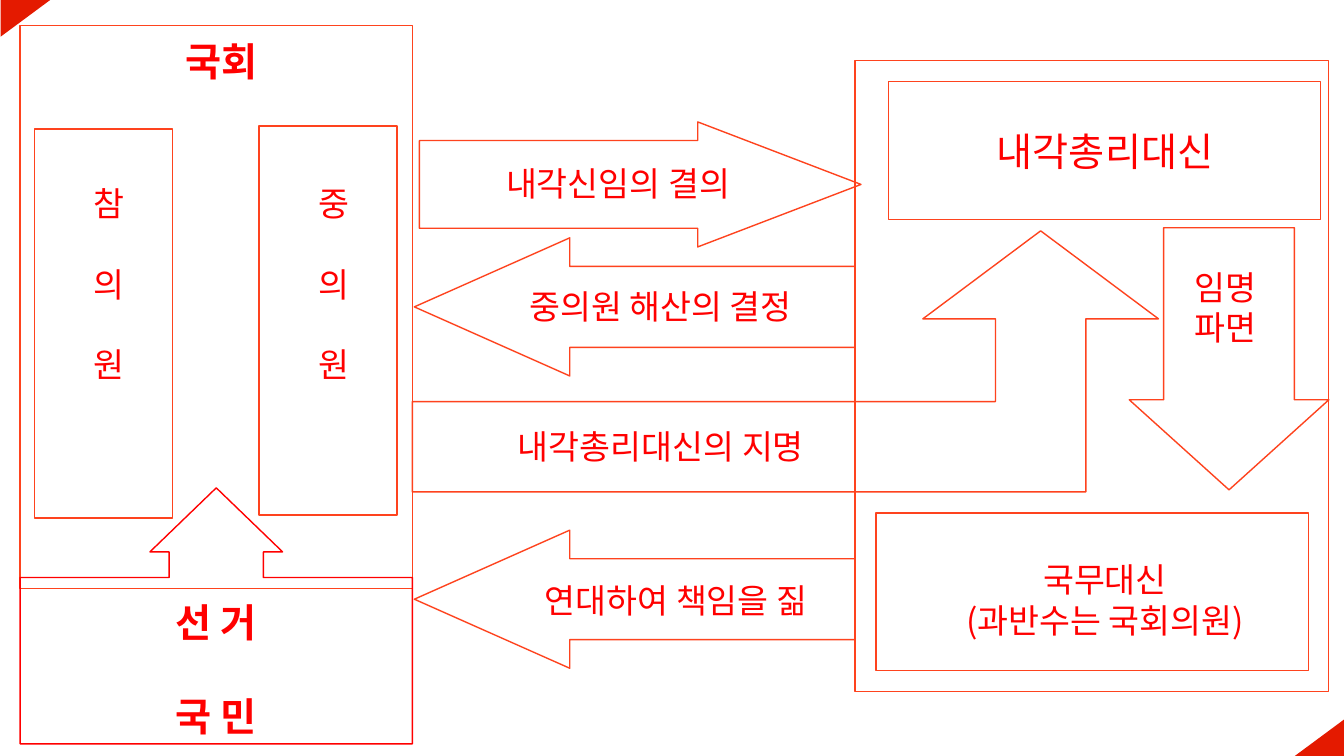
from dataclasses import dataclass

from lxml import etree
from pptx import Presentation
from pptx.dml.color import RGBColor
from pptx.enum.shapes import MSO_SHAPE
from pptx.enum.text import MSO_ANCHOR, MSO_AUTO_SIZE, PP_ALIGN
from pptx.oxml.ns import qn
from pptx.util import Inches, Pt

RECTANGLE = MSO_SHAPE.RECTANGLE
TRIANGLE = MSO_SHAPE.RIGHT_TRIANGLE
RIGHT_ARROW = MSO_SHAPE.RIGHT_ARROW
LEFT_ARROW = MSO_SHAPE.LEFT_ARROW
DOWN_ARROW = MSO_SHAPE.DOWN_ARROW
BENT_ARROW = MSO_SHAPE.BENT_UP_ARROW
CALLOUT = MSO_SHAPE.UP_ARROW_CALLOUT
LEFT, CENTER = PP_ALIGN.LEFT, PP_ALIGN.CENTER
TOP = MSO_ANCHOR.TOP
NO_AUTOFIT = MSO_AUTO_SIZE.NONE


@dataclass(frozen=True)
class Theme:
    font: str = "Noto Sans CJK KR"
    text: RGBColor = RGBColor(0xFF, 0x00, 0x00)
    outline: RGBColor = RGBColor(0xFE, 0x43, 0x1E)
    corner: RGBColor = RGBColor(0xE4, 0x1A, 0x00)
    heading: int = 28
    label: int = 24


THEME = Theme()

presentation = Presentation()
presentation.slide_width = Inches(13.33)
presentation.slide_height = Inches(7.5)
slide = presentation.slides.add_slide(presentation.slide_layouts[5])


def add_outline(kind, box, adjustments=(), color=THEME.outline):
    shape = slide.shapes.add_shape(kind, *map(Inches, box))
    shape.shadow.inherit = False
    shape.fill.background()
    shape.line.color.rgb = color
    shape.line.width = Pt(1)
    for index, value in enumerate(adjustments):
        shape.adjustments[index] = value
    return shape


def write_text(text, box, size=THEME.label, bold=False, align=CENTER, gap=0, holder=None):
    """Write one paragraph per line, with gap points between paragraphs."""
    if holder is None:
        holder = slide.shapes.add_textbox(0, 0, 0, 0)
    holder.left, holder.top, holder.width, holder.height = map(Inches, box)
    frame = holder.text_frame
    frame.word_wrap = True
    frame.auto_size = NO_AUTOFIT
    frame.vertical_anchor = TOP
    frame.text = text
    for index, paragraph in enumerate(frame.paragraphs):
        paragraph.alignment = align
        paragraph.space_before = Pt(gap if index else 0)
        font = paragraph.runs[0].font
        font.size = Pt(size)
        font.bold = bold
        font.color.rgb = THEME.text
        font.name = THEME.font
        properties = paragraph.runs[0]._r.get_or_add_rPr()
        etree.SubElement(properties, qn("a:ea"), typeface=THEME.font)


# Corner triangles
for left, top, rotation in ((0.07, -0.07, 90), (12.9, 7.07, 270)):
    corner = add_outline(TRIANGLE, (left, top, 0.37, 0.5))
    corner.rotation = rotation
    corner.fill.solid()
    corner.fill.fore_color.rgb = THEME.corner
    corner.line.fill.background()

# National Diet with its two chambers
add_outline(RECTANGLE, (0.2, 0.25, 3.89, 5.59))
write_text("국회", (0.94, 0.32, 2.52, 0.57), size=THEME.heading, bold=True,
           holder=slide.shapes.title)
for name, left, top in (("참\n의\n원", 0.34, 1.28), ("중\n의\n원", 2.57, 1.25)):
    add_outline(RECTANGLE, (left, top, 1.37, 3.86))
    write_text(name, (left + 0.44, 1.77, 0.61, 2.54), gap=28.5)

# Cabinet with the prime minister and the ministers
add_outline(RECTANGLE, (8.48, 0.6, 4.7, 6.26))
add_outline(RECTANGLE, (8.81, 0.81, 4.29, 1.37))
write_text("내각총리대신", (9.27, 1.21, 3.38, 0.57), size=THEME.heading)
add_outline(RECTANGLE, (8.69, 5.09, 4.29, 1.56))
write_text("국무대신\n(과반수는 국회의원)", (9.23, 5.5, 3.46, 0.91))

# Appointment and dismissal inside the cabinet
add_outline(DOWN_ARROW, (11.2, 2.26, 1.98, 2.6), (0.655, 0.451))
write_text("임명\n파면", (11.75, 2.6, 1.02, 0.91), align=LEFT)

# Arrows between the Diet and the cabinet
RETURN_SHAPE = (0.586, 1.125)
exchanges = (
    (RIGHT_ARROW, (4.16, 1.21, 4.38, 1.24), (0.702, 1.306),
     "내각신임의 결의", (4.03, 1.57, 4.2, 0.5)),
    (LEFT_ARROW, (4.11, 2.36, 4.37, 1.37), RETURN_SHAPE,
     "중의원 해산의 결정", (4.75, 2.79, 3.6, 0.5)),
    (BENT_ARROW, (4.09, 2.29, 7.4, 2.59), (0.346, 0.451, 0.337),
     "내각총리대신의 지명", (4.24, 4.18, 4.63, 0.5)),
    (LEFT_ARROW, (4.11, 5.26, 4.37, 1.37), RETURN_SHAPE,
     "연대하여 책임을 짊", (4.97, 5.7, 3.47, 0.5)),
)
for kind, arrow_box, adjustments, label, label_box in exchanges:
    add_outline(kind, arrow_box, adjustments)
    write_text(label, label_box)

# Election by the people
add_outline(CALLOUT, (0.2, 4.84, 3.89, 2.54), (0.368, 0.259, 0.25, 0.65), color=THEME.text)
write_text("선 거\n국 민", (0.4, 5.89, 3.49, 1.51), size=THEME.heading, bold=True, gap=33.5)

presentation.save("out.pptx")
